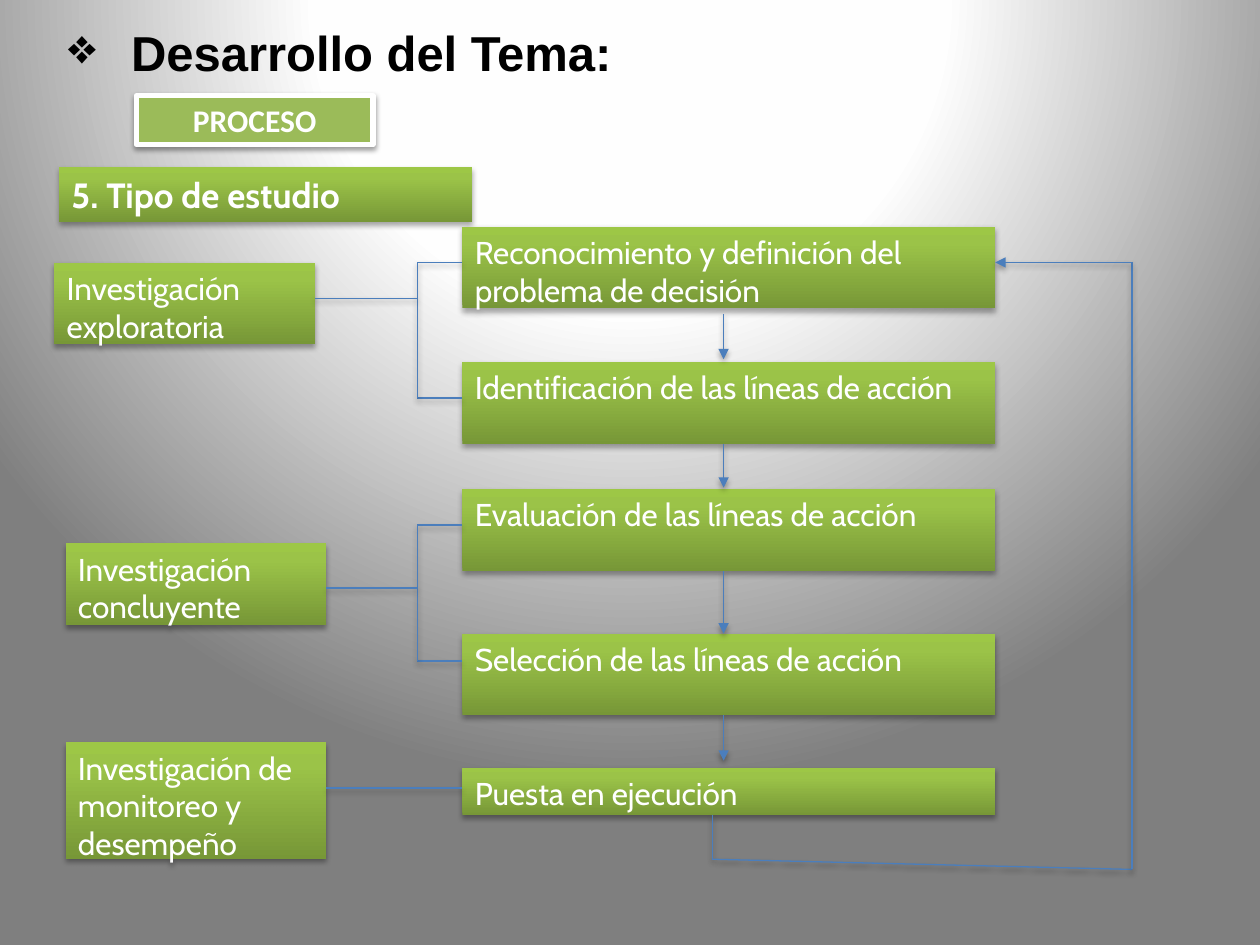
import pptx
import pptx.dml.color
import pptx.enum.shapes
import pptx.enum.text
import pptx.oxml
import pptx.oxml.ns
import pptx.util

Pt = pptx.util.Pt
RGBColor = pptx.dml.color.RGBColor
ALIGN = pptx.enum.text.PP_ALIGN
ANCHOR = pptx.enum.text.MSO_ANCHOR

BLACK = RGBColor(0x00, 0x00, 0x00)
WHITE = RGBColor(0xFF, 0xFF, 0xFF)
OFF_WHITE = RGBColor(0xFE, 0xFE, 0xFE)
GREY = RGBColor(0x7F, 0x7F, 0x7F)
OLIVE = RGBColor(0x9B, 0xBB, 0x59)
DARK_GREEN = RGBColor(0x77, 0x97, 0x37)
MID_GREEN = RGBColor(0x9B, 0xC3, 0x48)
LIGHT_GREEN = RGBColor(0x9D, 0xC7, 0x46)
BLUE = RGBColor(0x4B, 0x7E, 0xBC)

BACKDROP = [(0, WHITE), (40, OFF_WHITE), (100, GREY)]
GREENS = [(0, DARK_GREEN), (80, MID_GREEN), (100, LIGHT_GREEN)]
CIRCLE = ('<a:path path="circle"><a:fillToRect l="50000" t="-80000" '
          'r="50000" b="180000"/></a:path>')
UPWARD = '<a:lin ang="16200000" scaled="0"/>'

# Steps of the decision process: text, top, height
STEP_LEFT, STEP_WIDTH = 264.25, 304.5
STEP_RIGHT = STEP_LEFT + STEP_WIDTH
STEPS = [
    ("Reconocimiento y definición del problema de decisión", 129.5, 46.8),
    ("Identificación de las líneas de acción", 206.7, 46.8),
    ("Evaluación de las líneas de acción", 279.5, 46.8),
    ("Selección de las líneas de acción", 362, 46.8),
    ("Puesta en ejecución", 438.7, 27.2),
]

# Kinds of research: text, left, top, height
STUDY_WIDTH = 149
STUDIES = [
    ("Investigación exploratoria", 31, 150, 46.8),
    ("Investigación concluyente", 37.5, 310.5, 46.8),
    ("Investigación de monitoreo y desempeño", 37.5, 424.3, 66.5),
]

# Brackets joining a study to two steps: upper, lower, stem height, stem end
BRACKET_X = 238.5
BRACKETS = [(150, 227.5, 170.5, 180), (300, 377.7, 336, 186.5)]

# Arrows between steps: start and end height
ARROW_X = 413.5
ARROWS = [(179.3, 205.3), (253.5, 278.7), (326.3, 362), (408.8, 434.7)]

# Feedback from the last step to the first
LOOP_X, LOOP_START_X = 646.8, 407


def drawing_xml(name, inner):
    namespaces = pptx.oxml.ns.nsdecls("a")
    return pptx.oxml.parse_xml(f"<a:{name} {namespaces}>{inner}</a:{name}>")


def set_gradient(fill, properties, stops, shading):
    fill.solid()
    marks = "".join(
        f'<a:gs pos="{position * 1000}"><a:srgbClr val="{color}"/></a:gs>'
        for position, color in stops)
    plain = properties.find(pptx.oxml.ns.qn("a:solidFill"))
    properties.replace(
        plain, drawing_xml("gradFill", f"<a:gsLst>{marks}</a:gsLst>{shading}"))


def add_shadow(properties, distance=1.8, opacity=35):
    properties.append(drawing_xml(
        "effectLst",
        f'<a:outerShdw blurRad="{Pt(3.1)}" dist="{Pt(distance)}" dir="5400000" '
        f'rotWithShape="0"><a:srgbClr val="{BLACK}">'
        f'<a:alpha val="{opacity * 1000}"/></a:srgbClr></a:outerShdw>'))


def write_text(shape, text, size=18, font="Cabin", color=WHITE, bold=False,
               align=ALIGN.LEFT, anchor=ANCHOR.TOP):
    frame = shape.text_frame
    frame.word_wrap = True
    frame.auto_size = pptx.enum.text.MSO_AUTO_SIZE.NONE
    frame.vertical_anchor = anchor
    paragraph = frame.paragraphs[0]
    paragraph.alignment = align
    run = paragraph.add_run()
    run.text = text
    run.font.name = font
    run.font.size = Pt(size)
    run.font.bold = bold
    run.font.color.rgb = color
    return paragraph


def add_title(slide, text):
    title = slide.shapes.title
    title.left, title.top = Pt(31.7), Pt(9.4)
    title.width, title.height = Pt(663), Pt(104.4)
    paragraph = write_text(title, text, size=28, font="Arial", color=BLACK,
                           bold=True)
    bullet = paragraph._p.get_or_add_pPr()
    bullet.set("marL", str(Pt(36)))
    bullet.set("indent", str(Pt(-36)))
    bullet.append(pptx.oxml.parse_xml(
        f'<a:buChar {pptx.oxml.ns.nsdecls("a")} char="❖"/>'))


def add_rectangle(slide, left, top, width, height):
    return slide.shapes.add_shape(
        pptx.enum.shapes.MSO_SHAPE.RECTANGLE,
        Pt(left), Pt(top), Pt(width), Pt(height))


def add_tag(slide, text):
    tag = add_rectangle(slide, 77.8, 54.7, 135.4, 28)
    tag.fill.solid()
    tag.fill.fore_color.rgb = OLIVE
    tag.line.color.rgb = WHITE
    tag.line.width = Pt(3)
    add_shadow(tag._element.spPr, distance=1.6, opacity=38)
    write_text(tag, text, font="Calibri", bold=True, align=ALIGN.CENTER,
               anchor=ANCHOR.MIDDLE)


def add_green_box(slide, text, left, top, width, height, **text_format):
    box = add_rectangle(slide, left, top, width, height)
    set_gradient(box.fill, box._element.spPr, GREENS, UPWARD)
    box.line.fill.background()
    add_shadow(box._element.spPr)
    write_text(box, text, **text_format)


def add_line(slide, start, end, arrow=False):
    line = slide.shapes.add_connector(
        pptx.enum.shapes.MSO_CONNECTOR.STRAIGHT,
        *(Pt(value) for value in start + end))
    line.line.color.rgb = BLUE
    line.line.width = Pt(0.75)
    properties = line._element.spPr
    if arrow:
        tail = drawing_xml("tailEnd", "")
        tail.set("type", "triangle")
        properties.find(pptx.oxml.ns.qn("a:ln")).append(tail)
    add_shadow(properties)


def add_bracket(slide, upper, lower, stem, stem_end):
    for height in (upper, lower):
        add_line(slide, (STEP_LEFT, height), (BRACKET_X, height))
    add_line(slide, (BRACKET_X, upper), (BRACKET_X, lower))
    add_line(slide, (BRACKET_X, stem), (stem_end, stem))


def add_feedback(slide):
    add_line(slide, (LOOP_START_X, 465.9), (LOOP_START_X, 491))
    add_line(slide, (LOOP_X, 496.8), (LOOP_START_X, 491))
    add_line(slide, (LOOP_X, 150), (LOOP_X, 496.8))
    add_line(slide, (LOOP_X, 150), (STEP_RIGHT, 150), arrow=True)


def main():
    deck = pptx.Presentation()
    deck.slide_width, deck.slide_height = Pt(720), Pt(540)
    slide = deck.slides.add_slide(deck.slide_layouts[5])

    # Background
    backdrop = slide.background.fill
    backdrop.solid()
    set_gradient(backdrop, slide._element.find(".//" + pptx.oxml.ns.qn("p:bgPr")),
                 BACKDROP, CIRCLE)

    # Headings
    add_title(slide, "Desarrollo del Tema:")
    add_tag(slide, "PROCESO")
    add_green_box(slide, "5. Tipo de estudio", 33.8, 95.5, 236, 31.5,
                  size=20, bold=True)

    # Steps and kinds of research
    for text, top, height in STEPS:
        add_green_box(slide, text, STEP_LEFT, top, STEP_WIDTH, height)
    for text, left, top, height in STUDIES:
        add_green_box(slide, text, left, top, STUDY_WIDTH, height)

    # Links
    for bracket in BRACKETS:
        add_bracket(slide, *bracket)
    add_line(slide, (STEP_LEFT, 450.3), (186.5, 450.3))
    for start, end in ARROWS:
        add_line(slide, (ARROW_X, start), (ARROW_X, end), arrow=True)
    add_feedback(slide)

    deck.save("out.pptx")


if __name__ == "__main__":
    main()
